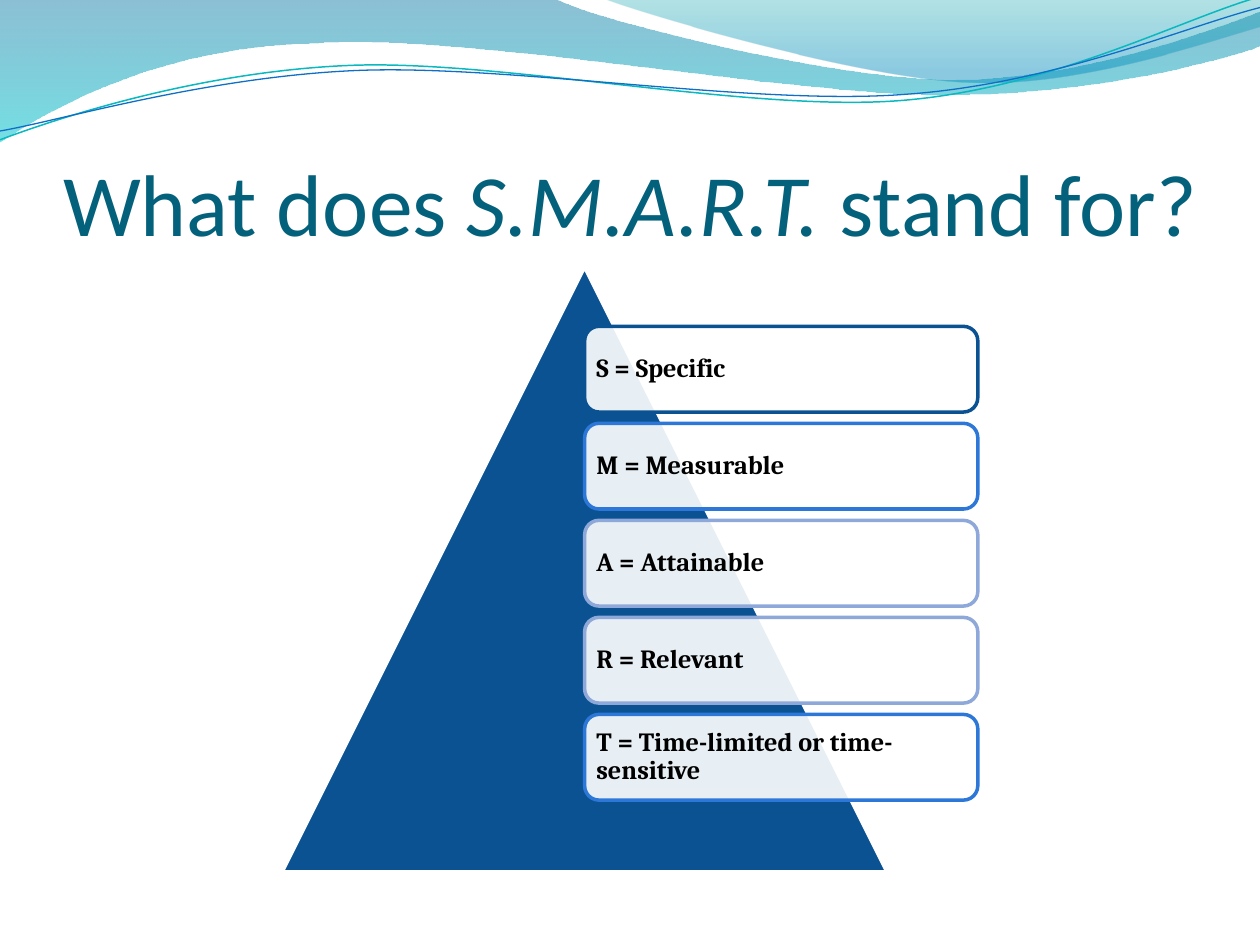
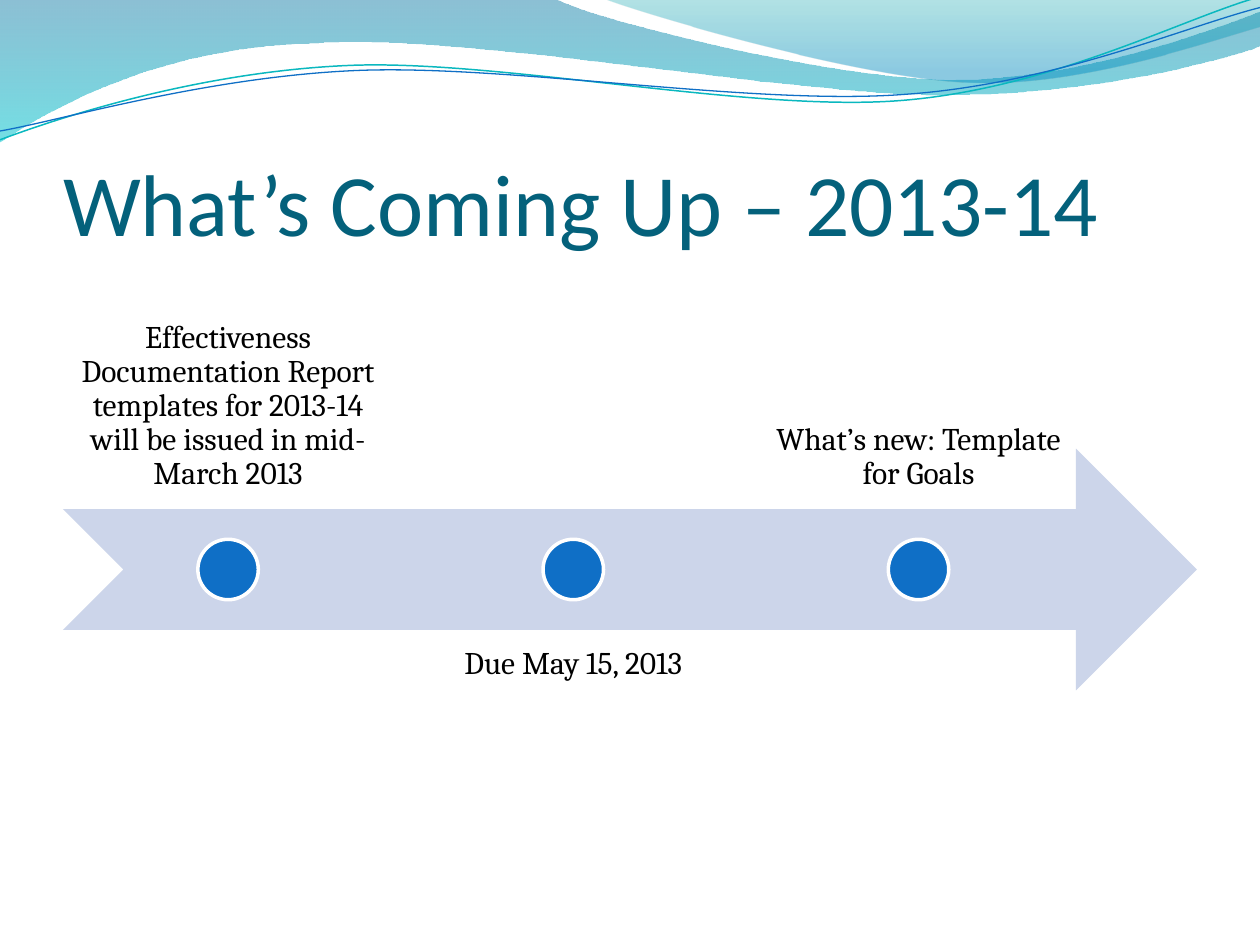
"""Build two slides: the S.M.A.R.T. pyramid and the 2013-14 timeline, under a shared wave band."""
from dataclasses import dataclass
from itertools import chain, islice

from lxml.etree import SubElement
from pptx import Presentation
from pptx.dml.color import RGBColor
from pptx.enum.shapes import MSO_SHAPE
from pptx.enum.text import MSO_ANCHOR, MSO_AUTO_SIZE, PP_ALIGN
from pptx.oxml.ns import qn
from pptx.util import Inches, Pt


@dataclass(frozen=True)
class Theme:
    title_font: str = "Calibri"
    body_font: str = "Cambria"
    title_size: int = 50
    step_size: int = 15
    event_size: int = 18
    outline: int = 2
    title: str = "04617B"
    ink: str = "000000"
    paper: str = "FFFFFF"
    navy: str = "0B5292"
    blue: str = "2C77D7"
    mist: str = "8EA9D9"
    pale: str = "CCD5EA"
    accent: str = "0F6FC6"
    teal: str = "0AB8BF"


theme = Theme()
deck = Presentation()
deck.slide_width, deck.slide_height = Inches(10), Inches(7.5)
column, row = deck.slide_width / 10, deck.slide_height / 7.5


def draw(slide, geometry, x, y, w, h, fill, line=None):
    """Place a preset shape on the grid of 10 columns by 7.5 rows."""
    shape = slide.shapes.add_shape(
        geometry, int(x * column), int(y * row), int(w * column), int(h * row))
    shape.shadow.inherit = False
    shape.fill.solid()
    shape.fill.fore_color.rgb = RGBColor.from_string(fill)
    if line:
        shape.line.color.rgb = RGBColor.from_string(line)
        shape.line.width = Pt(theme.outline)
    else:
        shape.line.fill.background()
    return shape


def write(frame, runs, font, size, colour, align=PP_ALIGN.LEFT, spacing=0.9, bold=False):
    """Fill a text frame with one paragraph of (text, italic) runs."""
    paragraph = frame.paragraphs[0]
    paragraph.alignment, paragraph.line_spacing = align, spacing
    for text, italic in runs:
        run = paragraph.add_run()
        run.text = text
        run.font.color.rgb = RGBColor.from_string(colour)
        look = {"name": font, "size": Pt(size), "bold": bold, "italic": italic}
        for attribute, value in look.items():
            setattr(run.font, attribute, value)


title_only = deck.slide_layouts[5]
heading = title_only.placeholders[0]
heading_place = {"left": int(0.5 * column), "top": int(0.77 * row),
                 "width": int(9 * column), "height": int(1.25 * row)}
for attribute, value in heading_place.items():
    setattr(heading, attribute, value)
heading_frame = {"margin_left": 0, "margin_right": 0, "margin_top": Inches(0.05),
                 "margin_bottom": 0, "vertical_anchor": MSO_ANCHOR.BOTTOM,
                 "word_wrap": True, "auto_size": MSO_AUTO_SIZE.NONE}
for attribute, value in heading_frame.items():
    setattr(heading.text_frame, attribute, value)

titles = [
    [("What does ", False), ("S.M.A.R.T. ", True), ("stand for?", False)],
    [("What’s Coming Up – 2013-14", False)],
]
smart, timeline = [deck.slides.add_slide(title_only) for _ in titles]
for slide, runs in zip((smart, timeline), titles):
    write(slide.shapes.title.text_frame, runs, theme.title_font, theme.title_size,
          theme.title, spacing=1.0)

waves = [
    {"start": (0, 0),
     "segments": [[(4.4, -0.01)],
                  [(4.76, 0.17), (6.64, 0.63), (7.58, 0.63)],
                  [(8.53, 0.63), (9.58, 0.26), (10, 0.09)],
                  [(10.01, 0.36)],
                  [(9.83, 0.44), (8.7, 0.76), (7.46, 0.75)],
                  [(6.22, 0.75), (3.82, 0.28), (2.57, 0.34)],
                  [(1.29, 0.36), (0.46, 0.83), (-0.01, 1.13)],
                  [(0, 0)]],
     "stops": [(0, "0074A1", 45), (1, "00C6CF", 55)]},
    {"start": (4.79, -0.01),
     "segments": [[(5.09, 0.11), (6.82, 0.62), (7.69, 0.65)],
                  [(8.56, 0.69), (9.61, 0.32), (10, 0.21)],
                  [(10, 0)],
                  [(4.79, -0.01)]],
     "stops": [(0, "00A1A9", 30), (0.8, "008BBF", 45)]},
    {"start": (0, 1.11),
     "segments": [[(0.48, 0.93), (1.58, 0.57), (2.77, 0.52)],
                  [(3.95, 0.47), (5.93, 0.89), (7.13, 0.8)],
                  [(8.33, 0.71), (9.38, 0.15), (9.98, -0.02)]],
     "line": (theme.teal, 0.85)},
    {"start": (0, 1.04),
     "segments": [[(0.47, 0.96), (1.64, 0.61), (2.83, 0.56)],
                  [(4.03, 0.51), (5.97, 0.84), (7.17, 0.75)],
                  [(8.36, 0.67), (9.41, 0.21), (10, 0.06)]],
     "line": (theme.accent, 0.75)},
]
for depth, wave in enumerate(waves):
    start, *points = [(int(x * column), int(y * row))
                      for x, y in chain([wave["start"]], *wave["segments"])]
    builder = smart.shapes.build_freeform(*start)
    builder.add_line_segments(points, close="stops" in wave)
    ribbon = builder.convert_to_shape()
    ribbon.shadow.inherit = False
    corners = iter(list(ribbon.element.iter(qn("a:lnTo"))))
    for segment in wave["segments"]:
        curve, *controls = islice(corners, len(segment))
        if controls:
            curve.tag = qn("a:cubicBezTo")
        for control in controls:
            curve.append(control[0])
            control.getparent().remove(control)
    if "stops" in wave:
        ribbon.line.fill.background()
        ribbon.fill.gradient()
        ribbon.fill.gradient_angle = 270
        for stop, (position, colour, _) in zip(ribbon.fill.gradient_stops, wave["stops"]):
            stop.position = position
            stop.color.rgb = RGBColor.from_string(colour)
        for tint, (_, _, opacity) in zip(ribbon.element.iter(qn("a:srgbClr")), wave["stops"]):
            SubElement(tint, qn("a:alpha"), val=str(opacity * 1000))
    else:
        colour, weight = wave["line"]
        ribbon.fill.background()
        ribbon.line.color.rgb = RGBColor.from_string(colour)
        ribbon.line.width = Pt(weight)
    title_only.shapes.element.insert(2 + depth, ribbon.element)

draw(smart, MSO_SHAPE.ISOSCELES_TRIANGLE, 2.24, 2.12, 4.8, 4.8, theme.navy, theme.paper)
steps = [
    ("S = Specific", theme.navy),
    ("M = Measurable", theme.blue),
    ("A = Attainable", theme.mist),
    ("R = Relevant", theme.mist),
    ("T = Time-limited or time-sensitive", theme.blue),
]
sides = ("left", "right", "top", "bottom")
step_frame = {"vertical_anchor": MSO_ANCHOR.MIDDLE, "word_wrap": True}
step_frame |= {f"margin_{side}": Inches(0.06) for side in sides}
for index, (meaning, border) in enumerate(steps):
    card = draw(smart, MSO_SHAPE.ROUNDED_RECTANGLE, 4.64, 2.59 + 0.77 * index, 3.12, 0.68,
                theme.paper, border)
    SubElement(next(card.element.iter(qn("a:srgbClr"))), qn("a:alpha"), val="90000")
    for attribute, value in step_frame.items():
        setattr(card.text_frame, attribute, value)
    write(card.text_frame, [(meaning, False)], theme.body_font, theme.step_size, theme.ink,
          bold=True)

draw(timeline, MSO_SHAPE.NOTCHED_RIGHT_ARROW, 0.5, 3.56, 9, 1.92, theme.pale)
events = [
    ("Effectiveness Documentation Report templates for 2013-14 will be issued in "
     "mid-March 2013", 2.12, MSO_ANCHOR.BOTTOM),
    ("Due May 15, 2013", 5, MSO_ANCHOR.TOP),
    ("What’s new: Template for Goals", 2.12, MSO_ANCHOR.BOTTOM),
]
event_width, event_height, dot = 2.61, 1.92, 0.48
event_frame = {"word_wrap": True}
event_frame |= {f"margin_{side}": Inches(0.14) for side in sides}
for index, (event, top, anchor) in enumerate(events):
    center = 1.81 + 2.74 * index
    label = timeline.shapes.add_textbox(
        int((center - event_width / 2) * column), int(top * row),
        int(event_width * column), int(event_height * row))
    label.text_frame.vertical_anchor = anchor
    for attribute, value in event_frame.items():
        setattr(label.text_frame, attribute, value)
    write(label.text_frame, [(event, False)], theme.body_font, theme.event_size, theme.ink,
          PP_ALIGN.CENTER)
    draw(timeline, MSO_SHAPE.OVAL, center - dot / 2, 4.28, dot, dot,
         theme.accent, theme.paper)

deck.save("out.pptx")
